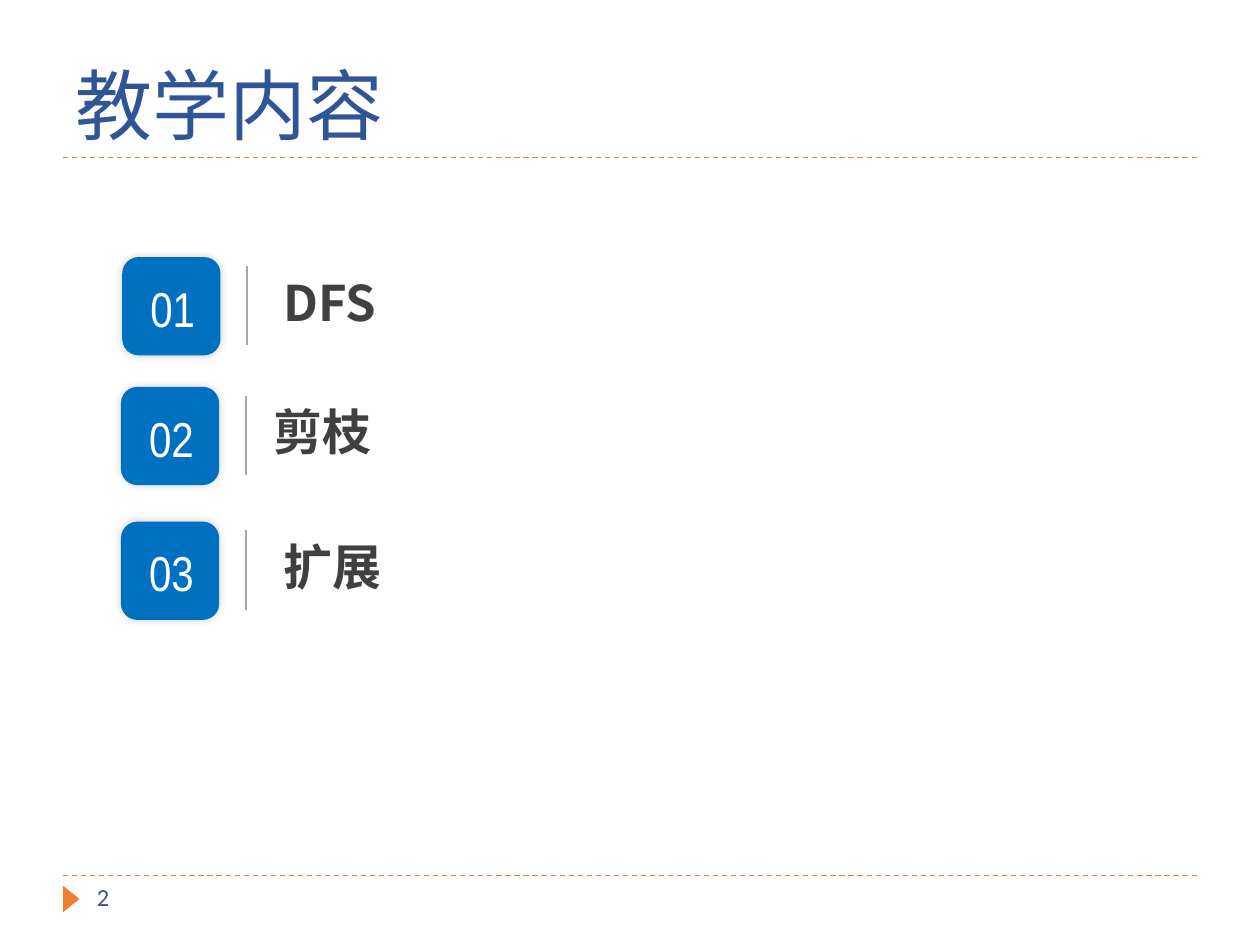
from dataclasses import dataclass

from lxml.etree import SubElement
from pptx import Presentation
from pptx.dml.color import RGBColor
from pptx.enum.dml import MSO_LINE_DASH_STYLE as Dash
from pptx.enum.shapes import MSO_CONNECTOR as Connector, MSO_SHAPE as Shape
from pptx.enum.text import MSO_ANCHOR as Anchor, PP_ALIGN as Align
from pptx.oxml import parse_xml
from pptx.oxml.ns import nsdecls, qn
from pptx.util import Inches, Pt


@dataclass(frozen=True)
class Theme:
    title: RGBColor = RGBColor(0x2F, 0x55, 0x97)
    accent: RGBColor = RGBColor(0xED, 0x7D, 0x31)
    badge: RGBColor = RGBColor(0x00, 0x70, 0xC0)
    badge_text: RGBColor = RGBColor(0xFF, 0xFF, 0xFF)
    topic: RGBColor = RGBColor(0x40, 0x40, 0x40)
    divider: RGBColor = RGBColor(0xA6, 0xA6, 0xA6)
    page: RGBColor = RGBColor(0x44, 0x54, 0x6A)
    title_size: int = 44
    topic_size: int = 28
    page_size: int = 14
    latin: str = "Calibri"
    narrow: str = "Arial Narrow"
    chinese: str = "Noto Sans CJK SC"


theme = Theme()
presentation = Presentation()
presentation.slide_width, presentation.slide_height = Inches(10), Inches(7.5)
slide = presentation.slides.add_slide(presentation.slide_layouts[5])
shapes = slide.shapes


def write(box, text, *, size, color, font, bold=False, align=Align.LEFT,
          anchor=Anchor.TOP, spacing=1.0):
    frame = box.text_frame
    frame.word_wrap = True
    frame.vertical_anchor = anchor
    paragraph = frame.paragraphs[0]
    paragraph.alignment, paragraph.line_spacing = align, spacing
    run = paragraph.add_run()
    run.text = text
    run.font.size, run.font.bold, run.font.name = Pt(size), bold, font
    run.font.color.rgb = color
    SubElement(run.font._element, qn("a:ea"), typeface=theme.chinese)


def draw_line(start, end, color, width, dash=None):
    line = shapes.add_connector(Connector.STRAIGHT, *map(Inches, start + end))
    line.line.color.rgb, line.line.width = color, Pt(width)
    line.line.dash_style = dash
    SubElement(line._element.spPr, qn("a:effectLst"))


# Frame: dashed rules, page marker and page number
for rule_y in (6.95, 1.25):
    draw_line((0.5, rule_y), (9.5, rule_y), theme.accent, 0.75, Dash.DASH)

marker = shapes.add_shape(Shape.ISOSCELES_TRIANGLE, Inches(0.46), Inches(7.07),
                          Inches(0.21), Inches(0.13))
marker.rotation = 90
marker.shadow.inherit = False
marker.fill.solid()
marker.fill.fore_color.rgb = theme.accent
marker.line.fill.background()

page = shapes.add_textbox(Inches(0.67), Inches(6.95), Inches(2.17), Inches(0.4))
write(page, "2", size=theme.page_size, color=theme.page, font=theme.latin)

title = shapes.title
title.left, title.top = Inches(0.5), Inches(0.17)
title.width, title.height = Inches(9), Inches(1.08)
write(title, "教学内容", size=theme.title_size, color=theme.title,
      font=theme.latin, anchor=Anchor.BOTTOM, spacing=0.9)

# Agenda: number, topic, badge left and top, topic left and width
agenda = [
    ("01", "DFS", 0.97, 2.04, 2.15, 7.2),
    ("02", "剪枝", 0.96, 3.07, 2.07, 6.61),
    ("03", "扩展", 0.96, 4.14, 2.15, 2.78),
]
BADGE, TEXT_HEIGHT = 0.78, 0.57

for number, topic, left, top, topic_left, topic_width in agenda:
    badge = shapes.add_shape(Shape.ROUNDED_RECTANGLE, Inches(left), Inches(top),
                             Inches(BADGE), Inches(BADGE))
    badge.fill.solid()
    badge.fill.fore_color.rgb = theme.badge
    badge.line.fill.background()
    badge._element.spPr.append(parse_xml(
        f'<a:effectLst {nsdecls("a")}><a:outerShdw blurRad="{Pt(5)}" dist="0" algn="ctr" '
        'rotWithShape="0"><a:srgbClr val="000000"><a:alpha val="19000"/></a:srgbClr>'
        '</a:outerShdw></a:effectLst>'))

    number_box = shapes.add_textbox(Inches(left + 0.01), Inches(top + 0.12),
                                    Inches(BADGE), Inches(TEXT_HEIGHT))
    write(number_box, number, size=theme.topic_size, color=theme.badge_text,
          font=theme.narrow, align=Align.CENTER)

    divider_x = left + 0.99
    draw_line((divider_x, top + 0.07), (divider_x, top + 0.7), theme.divider, 1)

    topic_box = shapes.add_textbox(Inches(topic_left), Inches(top + 0.07),
                                   Inches(topic_width), Inches(TEXT_HEIGHT))
    write(topic_box, topic, size=theme.topic_size, color=theme.topic,
          font=theme.chinese, bold=True)

presentation.save("out.pptx")
